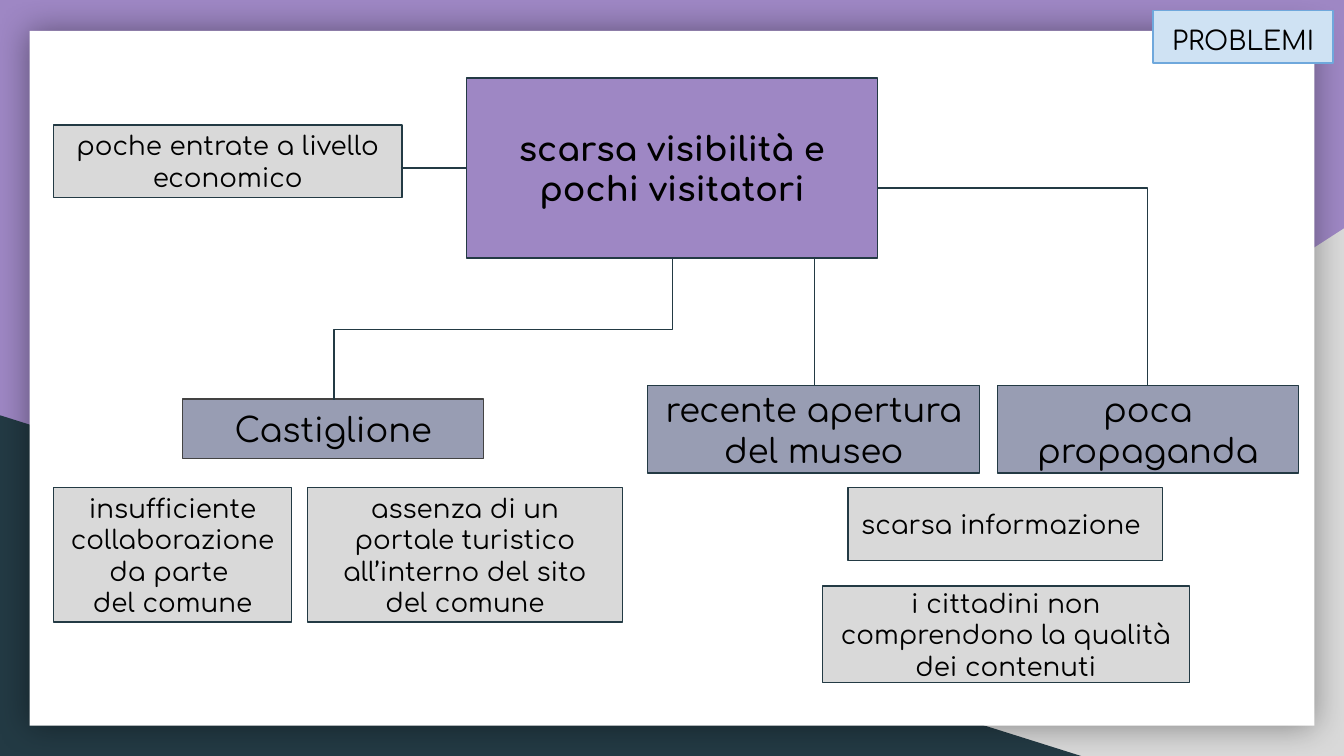
from pptx import Presentation
from pptx.dml.color import RGBColor
from pptx.enum.shapes import MSO_CONNECTOR, MSO_SHAPE
from pptx.enum.text import MSO_ANCHOR, PP_ALIGN
from pptx.oxml import parse_xml
from pptx.oxml.ns import nsdecls, qn
from pptx.util import Inches, Pt

PURPLE = RGBColor(0x9E, 0x87, 0xC4)
SLATE = RGBColor(0x98, 0x9D, 0xB3)
GREY = RGBColor(0xD9, 0xD9, 0xD9)
DARK = RGBColor(0x23, 0x3A, 0x44)
CHARCOAL = RGBColor(0x43, 0x43, 0x43)
PALE_BLUE = RGBColor(0xCF, 0xE2, 0xF3)
BLUE = RGBColor(0x6F, 0xA8, 0xDC)
WHITE = RGBColor(0xFF, 0xFF, 0xFF)
BLACK = RGBColor(0x00, 0x00, 0x00)


def add_block(s, kind, box, fill, line=None):
    sp = s.shapes.add_shape(kind, *[Inches(v) for v in box])
    sp.shadow.inherit = False
    sp.fill.solid()
    sp.fill.fore_color.rgb = fill
    if line is None:
        sp.line.fill.background()
    else:
        sp.line.color.rgb = line
        sp.line.width = Pt(0.75)
    return sp


def add_link(s, kind, ends, preset):
    c = s.shapes.add_connector(kind, *[Inches(v) for v in ends])
    c.line.color.rgb = DARK
    c.line.width = Pt(0.75)
    spPr = c._element.spPr
    spPr.find(qn("a:prstGeom")).set("prst", preset)
    spPr.append(parse_xml(f"<a:effectLst {nsdecls('a')}/>"))
    return c


prs = Presentation()
prs.slide_width = Inches(10)
prs.slide_height = Inches(10 * 9 / 16)
s = prs.slides.add_slide(prs.slide_layouts[6])
s.background.fill.solid()
s.background.fill.fore_color.rgb = PURPLE

corner = add_block(s, MSO_SHAPE.RIGHT_TRIANGLE, (3.92, 1.7, 6.08, 3.93), GREY)
corner._element.spPr.find(qn("a:xfrm")).set("flipH", "1")
add_block(s, MSO_SHAPE.RIGHT_TRIANGLE, (0, 3.09, 8.06, 2.54), DARK)
panel = add_block(s, MSO_SHAPE.RECTANGLE, (0.22, 0.23, 9.56, 5.17), WHITE)
panel._element.spPr.find(qn("a:effectLst")).append(parse_xml(
    f'<a:outerShdw {nsdecls("a")} blurRad="{Pt(18)}" dist="0" dir="0" algn="ctr" rotWithShape="0">'
    '<a:srgbClr val="000000"><a:alpha val="40000"/></a:srgbClr></a:outerShdw>'))

boxes = [
    ("scarsa visibilità e pochi visitatori", (3.47, 0.58, 3.06, 1.34), PURPLE, DARK, 18),
    ("Castiglione", (1.36, 2.97, 2.24, 0.44), SLATE, CHARCOAL, 18),
    ("assenza di un portale turistico all’interno del sito del comune",
     (2.29, 3.63, 2.34, 1), GREY, DARK, 14),
    ("insufficiente collaborazione da parte \vdel comune", (0.4, 3.63, 1.77, 1), GREY, DARK, 14),
    ("recente apertura del museo", (4.82, 2.87, 2.47, 0.65), SLATE, DARK, 18),
    ("poca propaganda", (7.42, 2.87, 2.24, 0.65), SLATE, DARK, 18),
    ("scarsa informazione", (6.31, 3.63, 2.34, 0.54), GREY, DARK, 14),
    ("i cittadini non comprendono la qualità dei contenuti",
     (6.12, 4.36, 2.73, 0.72), GREY, DARK, 14),
    ("poche entrate a livello economico", (0.4, 0.93, 2.59, 0.54), GREY, DARK, 14),
]
links = [
    (MSO_CONNECTOR.ELBOW, (6.53, 1.4, 8.54, 2.87), "bentConnector2", 0),
    (MSO_CONNECTOR.ELBOW, (5, 1.92, 6.06, 2.87), "bentConnector2", 0),
    (MSO_CONNECTOR.ELBOW, (3.22, 1.19, 4.27, 3.71), "bentConnector3", 90),
    (MSO_CONNECTOR.STRAIGHT, (2.98, 1.25, 3.47, 1.25), "line", 0),
]
tag = ("PROBLEMI", (8.58, 0.08, 1.34, 0.39), PALE_BLUE, BLUE, 14)

for text, box, fill, line, size in boxes + [tag]:
    if text == "PROBLEMI":
        for kind, ends, preset, turn in links:
            c = add_link(s, kind, ends, preset)
            if turn:
                c._element.spPr.find(qn("a:xfrm")).set("rot", str(turn * 60000))
    sp = add_block(s, MSO_SHAPE.RECTANGLE, box, fill, line)
    tf = sp.text_frame
    tf.word_wrap = True
    tf.margin_left = tf.margin_right = tf.margin_top = tf.margin_bottom = Inches(0.1)
    tf.vertical_anchor = MSO_ANCHOR.TOP if text == "PROBLEMI" else MSO_ANCHOR.MIDDLE
    p = tf.paragraphs[0]
    p.text = text
    p.alignment = PP_ALIGN.LEFT if text == "scarsa informazione" else PP_ALIGN.CENTER
    p.font.name = "Comfortaa"
    p.font.size = Pt(size)
    p.font.bold = fill == PURPLE
    p.font.color.rgb = BLACK

prs.save("out.pptx")
